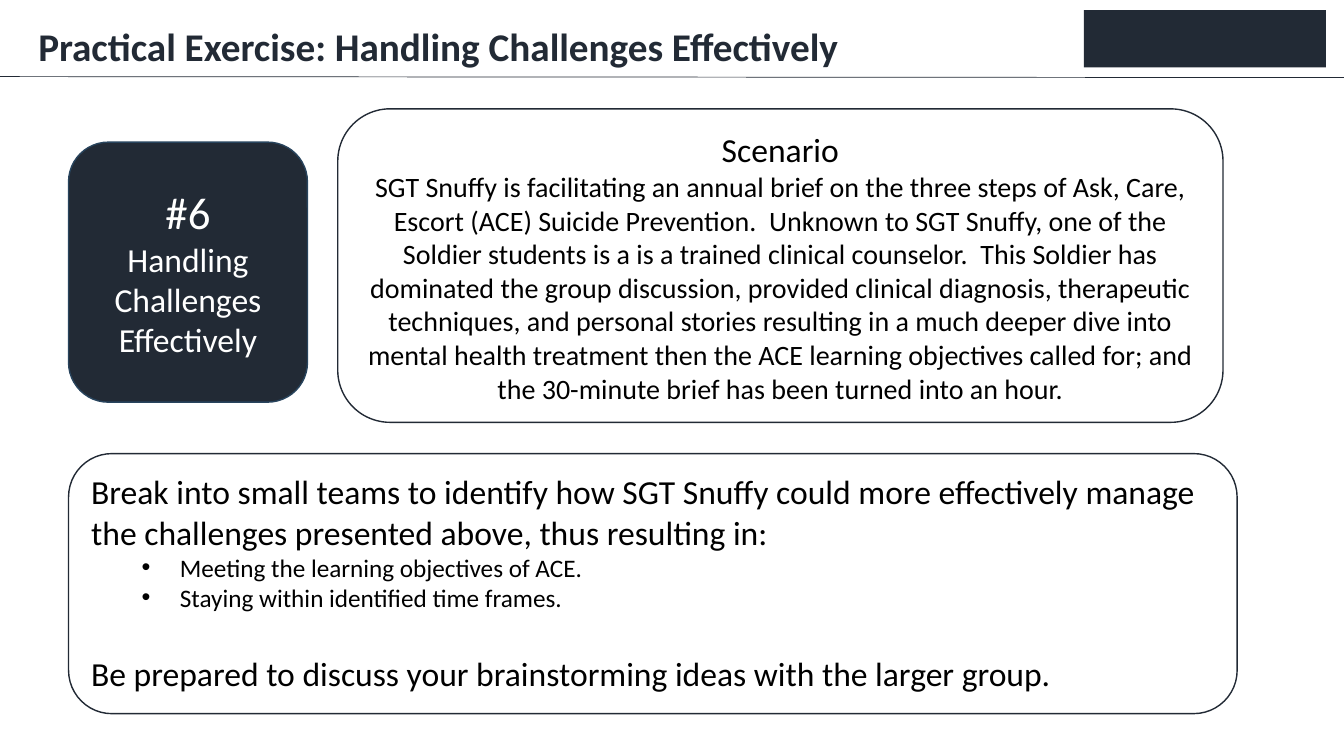
from lxml import etree
from pptx import Presentation
from pptx.dml.color import RGBColor
from pptx.enum.shapes import MSO_CONNECTOR, MSO_SHAPE
from pptx.enum.text import MSO_ANCHOR, PP_ALIGN
from pptx.oxml.ns import qn
from pptx.util import Inches, Pt

NAVY, WHITE, BLACK = "222A35", "FFFFFF", "000000"


def rgb(value):
    return RGBColor.from_string(value)


def write(tf, lines, color, align, bold=None):
    """Fill a text frame with (text, size) lines, one paragraph each."""
    tf.word_wrap = True
    for i, (text, size) in enumerate(lines):
        p = tf.paragraphs[0] if i == 0 else tf.add_paragraph()
        p.alignment = align
        r = p.add_run()
        r.text = text
        r.font.name, r.font.size, r.font.bold = "Calibri", Pt(size), bold
        r.font.color.rgb = rgb(color)


prs = Presentation()
prs.slide_width, prs.slide_height = Inches(13.33), Inches(7.5)
s = prs.slides.add_slide(prs.slide_layouts[5])

# Header
title = s.shapes.title
title.left, title.top = Inches(0.28), Inches(0.17)
title.width, title.height = Inches(10.68), Inches(0.57)
title.text_frame.vertical_anchor = MSO_ANCHOR.TOP
write(title.text_frame, [("Practical Exercise: Handling Challenges Effectively", 28)],
      NAVY, PP_ALIGN.LEFT, bold=True)

corner = s.shapes.add_shape(MSO_SHAPE.RECTANGLE, Inches(10.75), Inches(0.1),
                            Inches(2.4), Inches(0.57))
corner.shadow.inherit = False
corner.fill.solid()
corner.fill.fore_color.rgb = rgb(NAVY)
corner.line.fill.background()

rule = s.shapes.add_connector(MSO_CONNECTOR.STRAIGHT, Inches(0), Inches(0.76),
                              Inches(13.33), Inches(0.77))
rule.line.color.rgb = rgb(NAVY)
rule.line.width = Pt(0.5)
etree.SubElement(rule._element.spPr, qn("a:effectLst"))

# Rounded cards: position, fill, outline, anchor, text colour, alignment, lines
scenario = (
    "SGT Snuffy is facilitating an annual brief on the three steps of Ask, Care, "
    "Escort (ACE) Suicide Prevention.  Unknown to SGT Snuffy, one of the Soldier "
    "students is a is a trained clinical counselor.  This Soldier has dominated the "
    "group discussion, provided clinical diagnosis, therapeutic techniques, and "
    "personal stories resulting in a much deeper dive into mental health treatment "
    "then the ACE learning objectives called for; and the 30-minute brief has been "
    "turned into an hour.")
task = (
    "Break into small teams to identify how SGT Snuffy could more effectively manage "
    "the challenges presented above, thus resulting in:")
cards = [
    ((0.68, 1.41, 2.37, 2.58), NAVY, "28445D", MSO_ANCHOR.MIDDLE, WHITE, PP_ALIGN.CENTER,
     [("#6", 32), ("Handling Challenges Effectively", 24)]),
    ((3.35, 1.08, 8.78, 3.11), None, NAVY, MSO_ANCHOR.TOP, BLACK, PP_ALIGN.CENTER,
     [("Scenario", 24), (scenario, 20)]),
    ((0.68, 4.5, 11.59, 2.58), None, NAVY, MSO_ANCHOR.TOP, BLACK, PP_ALIGN.LEFT,
     [(task, 24),
      ("Meeting the learning objectives of ACE.", 18),
      ("Staying within identified time frames.", 18),
      ("Be prepared to discuss your brainstorming ideas with the larger group.", 24)]),
]
for box, fill, outline, anchor, color, align, lines in cards:
    sp = s.shapes.add_shape(MSO_SHAPE.ROUNDED_RECTANGLE, *[Inches(v) for v in box])
    sp.shadow.inherit = False
    if fill:
        sp.fill.solid()
        sp.fill.fore_color.rgb = rgb(fill)
    else:
        sp.fill.background()
    sp.line.color.rgb = rgb(outline)
    sp.line.width = Pt(1)
    tf = sp.text_frame
    tf.vertical_anchor = anchor
    write(tf, lines, color, align)

# Bullets and closing gap in the last card
paragraphs = tf.paragraphs
for p in paragraphs[1:3]:
    p.level = 1
    pPr = p._p.get_or_add_pPr()
    pPr.set("marL", str(Inches(0.88)))
    pPr.set("indent", str(Inches(-0.38)))
    etree.SubElement(pPr, qn("a:buFont"), typeface="Arial")
    etree.SubElement(pPr, qn("a:buChar"), char="•")
paragraphs[3].space_before = Pt(29)

prs.save("out.pptx")
